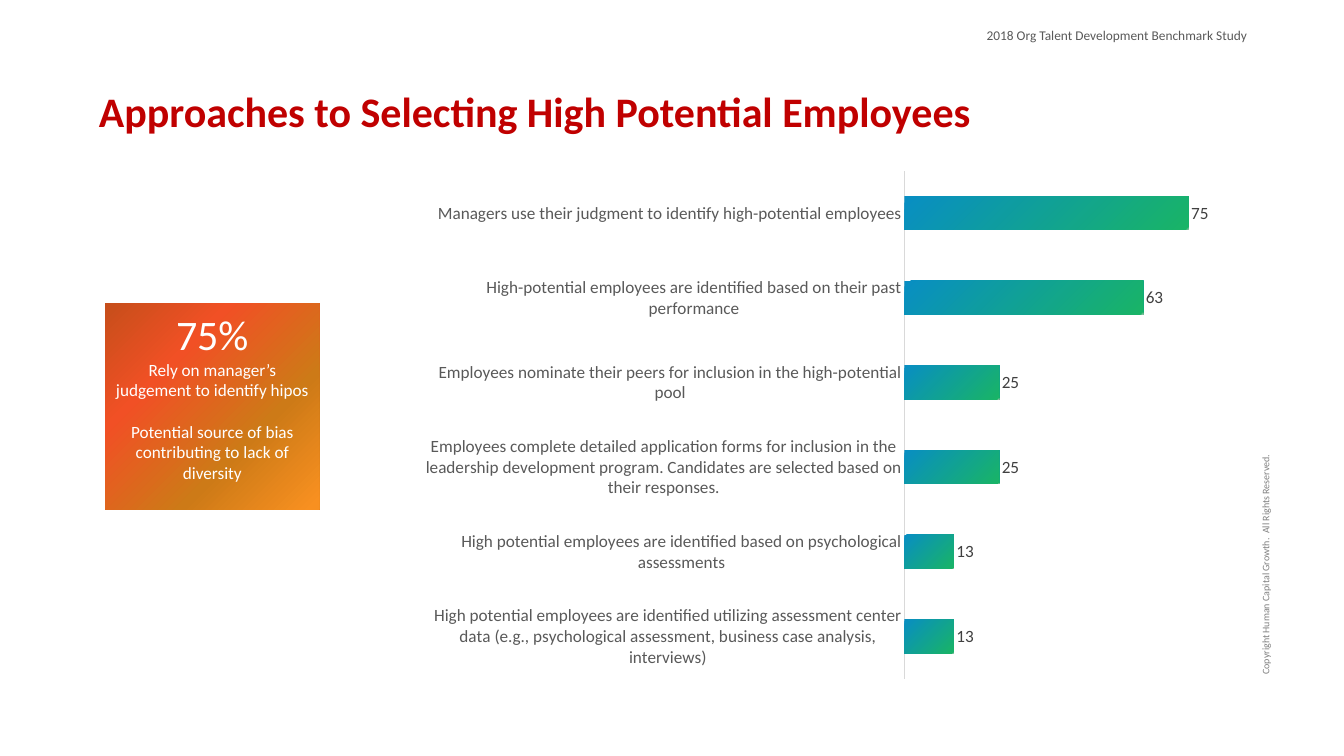
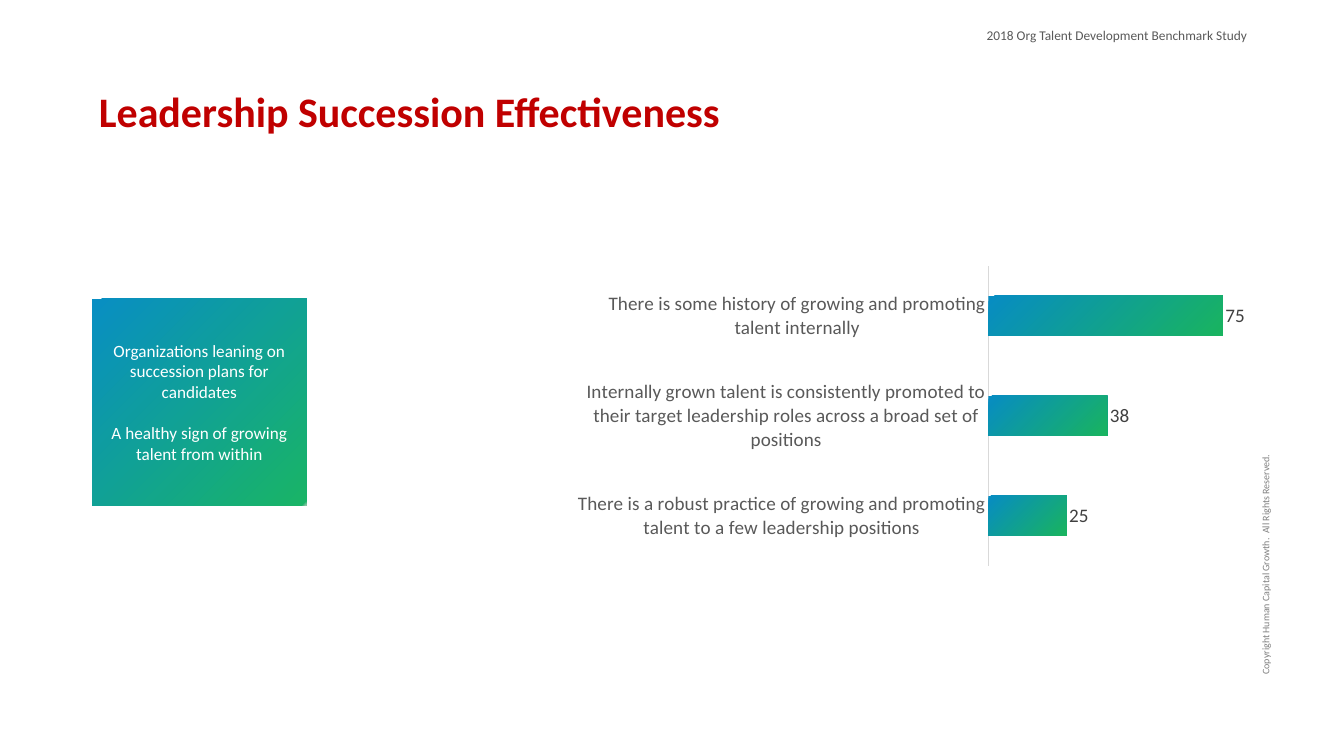
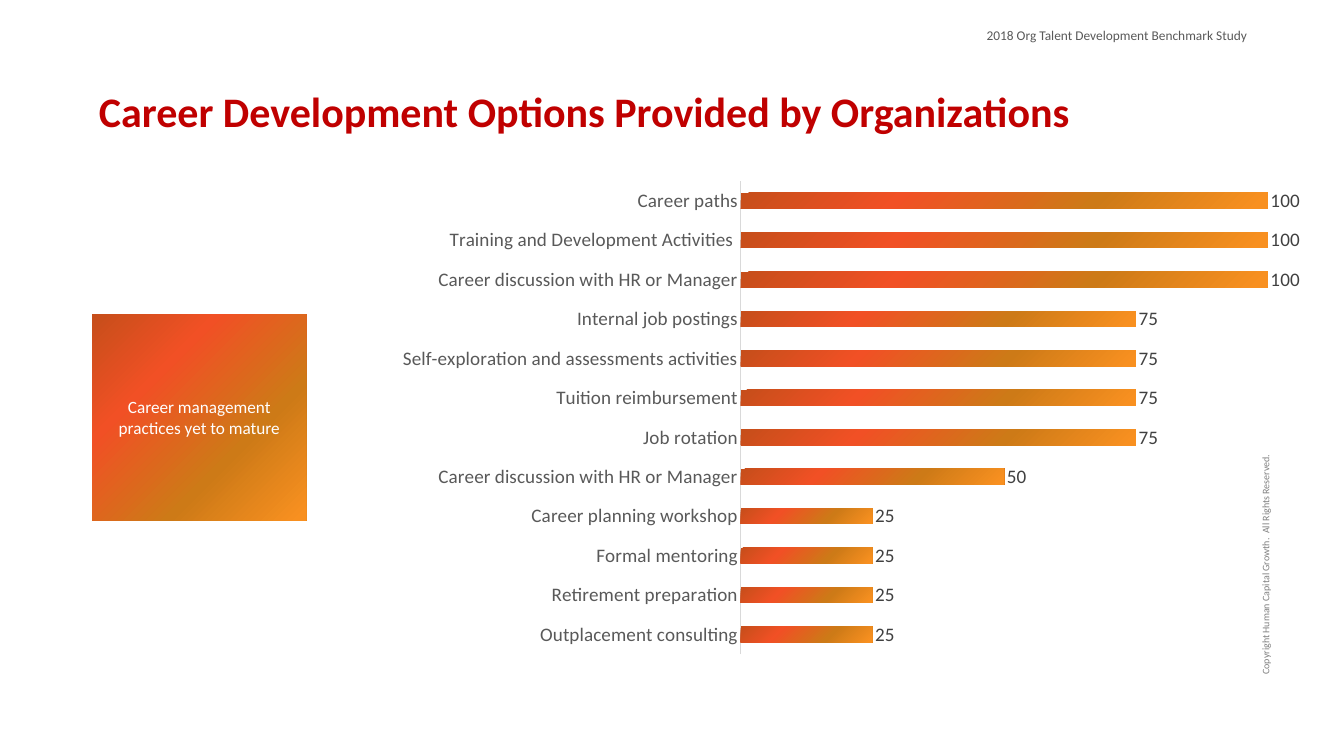
from pptx import Presentation
from pptx.chart.data import CategoryChartData
from pptx.dml.color import RGBColor
from pptx.enum.chart import XL_CHART_TYPE, XL_LABEL_POSITION, XL_TICK_MARK
from pptx.enum.shapes import MSO_SHAPE
from pptx.enum.text import MSO_ANCHOR, MSO_AUTO_SIZE, PP_ALIGN
from pptx.oxml import parse_xml
from pptx.oxml.ns import nsdecls, qn
from pptx.util import Inches, Pt

BAR = XL_CHART_TYPE.BAR_CLUSTERED
OUTSIDE = XL_LABEL_POSITION.OUTSIDE_END
NO_TICK = XL_TICK_MARK.NONE
RECTANGLE = MSO_SHAPE.RECTANGLE
MIDDLE = MSO_ANCHOR.MIDDLE
LEFT, CENTER = PP_ALIGN.LEFT, PP_ALIGN.CENTER
NO_FIT, GROW = MSO_AUTO_SIZE.NONE, MSO_AUTO_SIZE.SHAPE_TO_FIT_TEXT

FONT = "Calibri"
COLORS = {
    "title": "C00000",
    "header": "595959",
    "copyright": "808080",
    "category": "595959",
    "value": "404040",
    "axis": "D9D9D9",
    "white": "FFFFFF",
}
# Gradient stops (percent, colour), running from the bottom right corner
ORANGE = [(2, "F89020"), (33, "CD7A17"), (70, "F15025"), (100, "C64E1A")]
TEAL = [(0, "8DC7A8"), (1, "19B467"), (100, "088EC3")]
GREEN = [(0, "19B45F"), (100, "078CC3")]


def rgb(name):
    return RGBColor.from_string(COLORS[name])


def format_font(font, size, color, bold=False):
    font.name, font.size, font.bold = FONT, Pt(size), bold
    font.color.rgb = rgb(color)


def write_text(para, text, size=18, color="white", bold=False, align=LEFT, before=0, spacing=1.0):
    para.alignment, para.line_spacing = align, spacing
    para.space_before = Pt(before)
    span = para.add_run()
    span.text = text
    format_font(span.font, size, color, bold)


def paint_gradient(element, stops):
    """Turn the first solid fill of the element into a corner gradient."""
    solid = element.find(".//" + qn("a:solidFill"))
    stop_xml = "".join(
        f'<a:gs pos="{percent * 1000}"><a:srgbClr val="{color}"/></a:gs>' for percent, color in stops
    )
    gradient = parse_xml(
        f'<a:gradFill {nsdecls("a")} rotWithShape="1"><a:gsLst>{stop_xml}</a:gsLst>'
        '<a:path path="circle"><a:fillToRect l="100000" t="100000"/></a:path>'
        '<a:tileRect r="-100000" b="-100000"/></a:gradFill>'
    )
    solid.getparent().replace(solid, gradient)


class StudyDeck:
    def __init__(self):
        self.deck = Presentation()
        self.deck.slide_width, self.deck.slide_height = Inches(19.56), Inches(11)
        self.layout = self.deck.slide_layouts.get_by_name("Title Only")
        self.page = None

    def add_page(self, title):
        first = self.page is None
        self.page = self.deck.slides.add_slide(self.layout)
        if first:
            self.add_shared_text()
        box = self.page.shapes.title
        box.left, box.top, box.width, box.height = map(Inches, (1.34, 0.59, 16.87, 2.13))
        frame = box.text_frame
        frame.vertical_anchor, frame.auto_size = MIDDLE, NO_FIT
        write_text(frame.paragraphs[0], title, size=44, color="title", bold=True, spacing=0.9)

    def add_shared_text(self):
        """Put the copyright line and the header on the layout."""
        copyright_box = self.add_label(
            "Copyright Human Capital Growth.  All Rights Reserved.",
            (16.58, 7.88, 3.67, 0.4), size=10.5, color="copyright")
        copyright_box.rotation = 270
        copyright_box.text_frame.vertical_anchor = MIDDLE
        header = self.add_label(
            "2018 Org Talent Development Benchmark Study",
            (14.26, 0.35, 4.16, 0.34), size=14, color="header")
        header.text_frame.word_wrap = False
        header.text_frame.auto_size = GROW
        for box in (copyright_box, header):
            self.layout.element.cSld.spTree.append(box.element)

    def add_label(self, text, place, **style):
        box = self.page.shapes.add_textbox(*map(Inches, place))
        box.text_frame.word_wrap = True
        write_text(box.text_frame.paragraphs[0], text, **style)
        return box

    def add_callout(self, left, top, stops, lines, bottom_margin=0.05):
        """Draw a gradient box; each line is a text and its format."""
        box = self.page.shapes.add_shape(
            RECTANGLE, Inches(left), Inches(top), Inches(3.12), Inches(3))
        box.shadow.inherit = False
        box.line.fill.background()
        box.fill.solid()
        box.fill.fore_color.rgb = rgb("white")
        paint_gradient(box.element.spPr, stops)
        frame = box.text_frame
        frame.word_wrap, frame.vertical_anchor = True, MIDDLE
        frame.margin_bottom = Inches(bottom_margin)
        for index, (text, style) in enumerate(lines):
            para = frame.add_paragraph() if index else frame.paragraphs[0]
            write_text(para, text, align=CENTER, **style)

    def add_bars(self, place, size, stops, rows):
        data = CategoryChartData(number_format="0")
        data.categories = [category for category, _ in rows]
        data.add_series("Series 1", [value for _, value in rows])
        chart = self.page.shapes.add_chart(BAR, *map(Inches, place), data).chart
        chart.has_legend = chart.has_title = False
        chart.font.name, chart.font.size = FONT, Pt(size)

        # Bars and their values
        plot = chart.plots[0]
        plot.gap_width, plot.overlap, plot.vary_by_categories = 150, -25, False
        series = plot.series[0]
        series.invert_if_negative = False
        series.format.fill.solid()
        series.format.fill.fore_color.rgb = rgb("white")
        paint_gradient(chart.element.xpath(".//c:ser")[0], stops)
        plot.has_data_labels = True
        labels = plot.data_labels
        labels.show_value, labels.position = True, OUTSIDE
        labels.number_format, labels.number_format_is_linked = "0", False
        format_font(labels.font, size, "value")

        # Axes
        axis = chart.category_axis
        axis.reverse_order = True
        axis.major_tick_mark = axis.minor_tick_mark = NO_TICK
        axis.has_major_gridlines = False
        axis.format.line.color.rgb = rgb("axis")
        axis.format.line.width = Pt(0.75)
        format_font(axis.tick_labels.font, size, "category")
        chart.value_axis.has_major_gridlines = False
        chart.value_axis.minimum_scale = 0
        chart.value_axis.visible = False


def main():
    study = StudyDeck()
    gap = {"before": 21.6}

    # Selecting high potentials
    study.add_page("Approaches to Selecting High Potential Employees")
    study.add_bars((5.96, 2.33, 11.85, 7.7), 18, TEAL, [
        ("Managers use their judgment to identify high-potential employees", 75),
        ("High-potential employees are identified based on their past performance", 63),
        ("Employees nominate their peers for inclusion in the high-potential pool", 25),
        ("Employees complete detailed application forms for inclusion in the leadership development "
         "program. Candidates are selected based on their responses.", 25),
        ("High potential employees are identified based on psychological assessments", 13),
        ("High potential employees are identified utilizing assessment center data (e.g., "
         "psychological assessment, business case analysis, interviews)", 13),
    ])
    study.add_callout(1.53, 4.41, ORANGE, [
        ("75%", {"size": 44}),
        ("Rely on manager’s judgement to identify hipos", {}),
        ("Potential source of bias contributing to lack of diversity", gap),
    ], bottom_margin=0.35)

    # Succession
    study.add_page("Leadership Succession Effectiveness")
    study.add_bars((8.34, 3.78, 9.88, 4.54), 20, GREEN, [
        ("There is some history of growing and promoting talent internally", 75),
        ("Internally grown talent is consistently promoted to their target leadership roles "
         "across a broad set of positions", 38),
        ("There is a robust practice of growing and promoting talent to a few leadership positions", 25),
    ])
    study.add_callout(1.34, 4.35, TEAL, [
        ("Organizations leaning on succession plans for candidates", {}),
        ("A healthy sign of growing talent from within", gap),
    ])

    # Career development
    study.add_page("Career Development Options Provided by Organizations")
    study.add_bars((5.57, 2.49, 14.71, 7.17), 20, ORANGE, [
        ("Career paths", 100),
        ("Training and Development Activities ", 100),
        ("Career discussion with HR or Manager", 100),
        ("Internal job postings", 75),
        ("Self-exploration and assessments activities", 75),
        ("Tuition reimbursement", 75),
        ("Job rotation", 75),
        ("Career discussion with HR or Manager", 50),
        ("Career planning workshop", 25),
        ("Formal mentoring", 25),
        ("Retirement preparation", 25),
        ("Outplacement consulting", 25),
    ])
    study.add_callout(1.34, 4.57, ORANGE, [("Career management practices yet to mature", {})])

    study.deck.save("out.pptx")


if __name__ == "__main__":
    main()
